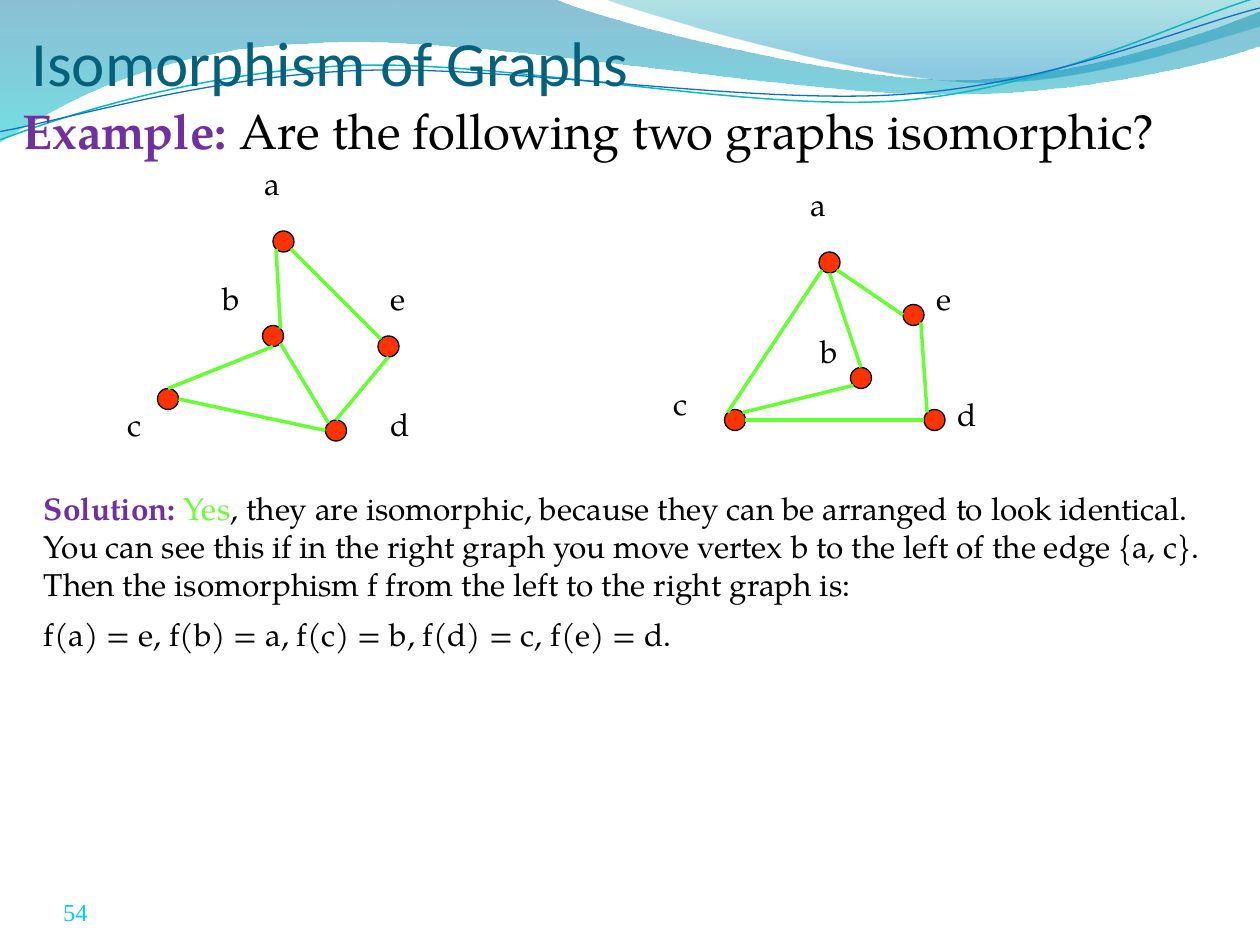
from dataclasses import dataclass
from math import cos, radians, sin

from lxml.etree import SubElement
from pptx import Presentation
from pptx.dml.color import RGBColor
from pptx.enum.shapes import MSO_CONNECTOR, MSO_SHAPE
from pptx.enum.text import MSO_ANCHOR
from pptx.oxml.ns import qn
from pptx.util import Pt

EMU_PER_PX = 7620  # 120 px to the inch
DOT_SIZE = 20
LABEL_HEIGHT = 68
SERIF = "TeX Gyre Pagella"
COLORS = {
    "title": "04617B", "heading": "7030A0", "text": "000000",
    "number": "00CCFF", "dot": "FF3300", "edge": "66FF33",
    "band_blue": "0074A1", "band_cyan": "00C6CF",
    "crest_teal": "00A1A9", "crest_blue": "008BBF",
    "wave_teal": "0AB8BF", "wave_blue": "0F6FC6",
}
# Angle of each compass point on a dot, clockwise from the right
COMPASS = {name: 45 * step for step, name in
           enumerate(("e", "se", "s", "sw", "w", "nw", "n", "ne"))}


@dataclass
class Stop:
    position: float
    color: str
    opacity: int


@dataclass
class Curve:
    """Segments hold one point for a line or three for a cubic curve."""
    start: tuple
    segments: list


@dataclass
class Vertex:
    x: int
    y: int
    label_x: int
    label_y: int
    label_width: int = 80


@dataclass
class Graph:
    vertices: dict
    edges: list  # (vertex, compass point, vertex, compass point)


@dataclass
class Run:
    text: str
    color: str = "text"
    bold: bool = False


def px(length: float) -> int:
    return round(length * EMU_PER_PX)


def rgb(name: str) -> RGBColor:
    return RGBColor.from_string(COLORS[name])


def add_text(shapes, box: tuple, paragraphs: list, *, size: int, font: str = SERIF,
             anchor=MSO_ANCHOR.TOP, insets: tuple = (12, 6, 12, 6), gap: int = 0):
    frame = shapes.add_textbox(*map(px, box)).text_frame
    frame.word_wrap = True
    frame.vertical_anchor = anchor
    (frame.margin_left, frame.margin_top,
     frame.margin_right, frame.margin_bottom) = map(px, insets)
    for index, runs in enumerate(paragraphs):
        paragraph = frame.add_paragraph() if index else frame.paragraphs[0]
        if index:
            paragraph.space_before = Pt(gap)
        for item in runs:
            run = paragraph.add_run()
            run.text = item.text
            run.font.size, run.font.name = Pt(size), font
            run.font.bold = item.bold
            run.font.color.rgb = rgb(item.color)


def add_curve(shapes, curve: Curve, close: bool):
    builder = shapes.build_freeform(*curve.start, scale=EMU_PER_PX)
    builder.add_line_segments([point for segment in curve.segments for point in segment],
                              close=close)
    shape = builder.convert_to_shape()
    shape.shadow.inherit = False
    # Join each run of three line points into one cubic curve
    lines = iter(shape._element.xpath(".//a:lnTo"))
    for segment in curve.segments:
        first, *others = [next(lines) for _ in segment]
        if others:
            first.tag = qn("a:cubicBezTo")
        for other in others:
            first.append(other[0])
            other.getparent().remove(other)
    return shape


def add_band(shapes, curve: Curve, stops: list) -> None:
    shape = add_curve(shapes, curve, close=True)
    shape.line.fill.background()
    shape.fill.gradient()
    shape.fill.gradient_angle = 270
    for target, stop in zip(shape.fill.gradient_stops, stops):
        target.position = stop.position
        target.color.rgb = rgb(stop.color)
    for element, stop in zip(shape._element.xpath(".//a:gs/a:srgbClr"), stops):
        SubElement(element, qn("a:alpha"), val=str(stop.opacity * 1000))


def add_wave(shapes, curve: Curve, color: str, width: float) -> None:
    shape = add_curve(shapes, curve, close=False)
    shape.fill.background()
    shape.line.color.rgb = rgb(color)
    shape.line.width = Pt(width)
    shape.rotation = 357.3


def rim_point(vertex: Vertex, compass: str) -> tuple:
    angle, radius = radians(COMPASS[compass]), DOT_SIZE / 2
    return (px(vertex.x + radius + radius * cos(angle)),
            px(vertex.y + radius + radius * sin(angle)))


def add_graph(slide, graph: Graph) -> None:
    shapes = slide.shapes.add_group_shape().shapes
    for name, vertex in graph.vertices.items():
        dot = shapes.add_shape(MSO_SHAPE.FLOWCHART_CONNECTOR,
                               *map(px, (vertex.x, vertex.y, DOT_SIZE, DOT_SIZE)))
        dot.shadow.inherit = False
        dot.fill.solid()
        dot.fill.fore_color.rgb = rgb("dot")
        dot.line.color.rgb = rgb("text")
        dot.line.width = Pt(0.75)
        add_text(shapes, (vertex.label_x, vertex.label_y, vertex.label_width, LABEL_HEIGHT),
                 [[Run(name)]], size=18)
    for start, start_side, end, end_side in graph.edges:
        edge = shapes.add_connector(MSO_CONNECTOR.STRAIGHT,
                                    *rim_point(graph.vertices[start], start_side),
                                    *rim_point(graph.vertices[end], end_side))
        edge.line.color.rgb = rgb("edge")
        edge.line.width = Pt(2)
        SubElement(edge._element.spPr, qn("a:effectLst"))


BAND = Curve((0, 0), [
    [(528, -1)],
    [(571, 20), (797, 76), (910, 76)], [(1024, 76), (1150, 31), (1200, 11)],
    [(1201, 43)],
    [(1180, 53), (1044, 91), (895, 90)], [(746, 90), (458, 34), (308, 41)],
    [(154, 43), (55, 100), (-1, 136)]])
CREST = Curve((575, -1), [
    [(611, 13), (818, 74), (923, 78)], [(1027, 83), (1153, 38), (1200, 25)], [(1200, 0)]])
TEAL_WAVE = Curve((-2, 105), [
    [(55, 86), (190, 49), (332, 50)], [(475, 50), (709, 112), (854, 108)],
    [(998, 104), (1128, 43), (1200, 26)]])
BLUE_WAVE = Curve((-2, 97), [
    [(55, 90), (197, 54), (340, 55)], [(484, 56), (715, 106), (860, 102)],
    [(1003, 99), (1131, 50), (1202, 36)]])

LEFT_GRAPH = Graph(
    {"a": Vertex(260, 220, 240, 150), "b": Vertex(250, 310, 200, 260, 40),
     "c": Vertex(150, 370, 110, 380, 50), "d": Vertex(310, 400, 360, 380),
     "e": Vertex(360, 320, 360, 260)},
    [("d", "n", "e", "s"), ("d", "w", "c", "e"), ("c", "n", "b", "s"),
     ("b", "ne", "a", "sw"), ("a", "se", "e", "nw"), ("b", "se", "d", "nw")])
RIGHT_GRAPH = Graph(
    {"a": Vertex(780, 240, 760, 170), "b": Vertex(810, 350, 770, 310, 40),
     "c": Vertex(690, 390, 630, 360, 50), "d": Vertex(880, 390, 900, 370),
     "e": Vertex(860, 290, 880, 260)},
    [("c", "e", "d", "w"), ("c", "ne", "b", "sw"), ("b", "n", "a", "s"),
     ("a", "se", "e", "w"), ("e", "se", "d", "nw"), ("a", "sw", "c", "nw")])


def main() -> None:
    presentation = Presentation()
    presentation.slide_width, presentation.slide_height = px(1200), px(900)
    slide = presentation.slides.add_slide(presentation.slide_layouts[6])
    shapes = slide.shapes

    # Wavy header
    add_band(shapes, BAND, [Stop(0, "band_blue", 45), Stop(1, "band_cyan", 55)])
    add_band(shapes, CREST, [Stop(0, "crest_teal", 30), Stop(0.8, "crest_blue", 45)])
    add_wave(shapes, TEAL_WAVE, "wave_teal", 0.85)
    add_wave(shapes, BLUE_WAVE, "wave_blue", 0.75)

    # Page number, title and question
    add_text(shapes, (60, 834, 280, 48), [[Run("54", "number")]], size=14,
             font="Times New Roman", anchor=MSO_ANCHOR.BOTTOM, insets=(0, 0, 0, 0))
    add_text(shapes, (30, 4, 1130, 90), [[Run("Isomorphism of Graphs", "title")]], size=36,
             font="Calibri", anchor=MSO_ANCHOR.BOTTOM, insets=(0, 6, 0, 0))
    add_text(shapes, (10, 90, 1190, 70),
             [[Run("Example: ", "heading", True),
               Run("Are the following two graphs isomorphic?")]], size=28)

    # The two graphs
    for graph in (LEFT_GRAPH, RIGHT_GRAPH):
        add_graph(slide, graph)

    # Solution
    add_text(shapes, (30, 460, 1150, 240),
             [[Run("Solution: ", "heading", True), Run("Yes", "edge"),
               Run(", they are isomorphic, because they can be arranged to look identical. "
                   "You can see this if in the right graph you move vertex b to the left of "
                   "the edge {a, c}. Then the isomorphism f from the left to the right graph "
                   "is:")],
              [Run("f(a) = e, f(b) = a, f(c) = b, f(d) = c, f(e) = d.")]], size=18, gap=7)

    presentation.save("out.pptx")


if __name__ == "__main__":
    main()
